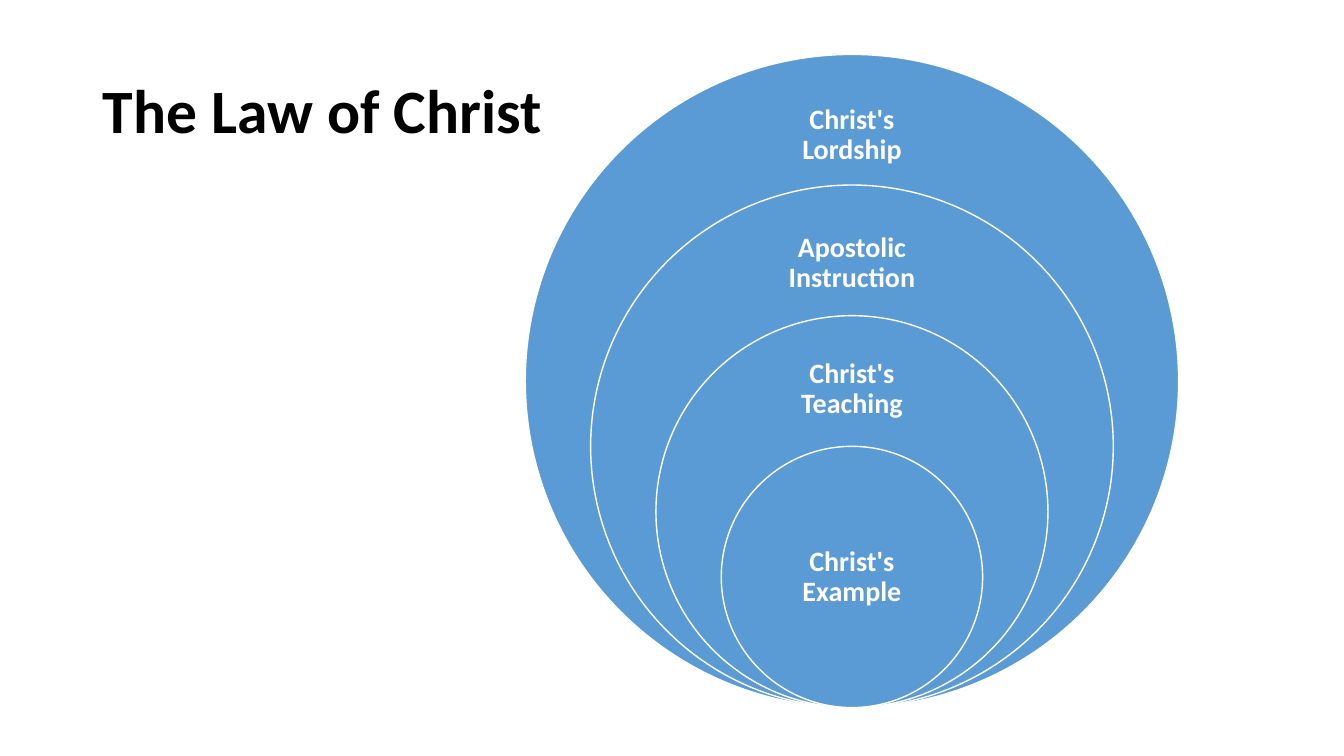
from pptx import Presentation
from pptx.dml.color import RGBColor
from pptx.enum.shapes import MSO_SHAPE
from pptx.enum.text import MSO_ANCHOR, MSO_AUTO_SIZE, PP_ALIGN
from pptx.util import Inches, Pt

OVAL = MSO_SHAPE.OVAL
MIDDLE = MSO_ANCHOR.MIDDLE
LEFT, CENTER = PP_ALIGN.LEFT, PP_ALIGN.CENTER
NO_AUTOFIT = MSO_AUTO_SIZE.NONE

TITLE = "The Law of Christ"
# Label, then top, width and height of its text box, from outer to inner circle
RINGS = [
    ("Christ's Lordship", 0.86, 1.81, 0.97),
    ("Apostolic Instruction", 2.15, 1.81, 0.93),
    ("Christ's Teaching", 3.42, 1.81, 0.88),
    ("Christ's Example", 5.08, 1.83, 1.3),
]

FONT = "Calibri"
BLUE, WHITE, BLACK = "5B9BD5", "FFFFFF", "000000"
CENTER_X = 8.45
BASE_Y = 7.02
OUTER_DIAMETER = 6.48
DIAMETER_STEP = OUTER_DIAMETER / 5
LABEL_INSET = 0.16


def color(hex_string):
    return RGBColor.from_string(hex_string)


def write(text_frame, text, size, hex_color, alignment):
    text_frame.word_wrap = True
    text_frame.auto_size = NO_AUTOFIT
    text_frame.vertical_anchor = MIDDLE
    paragraph = text_frame.paragraphs[0]
    paragraph.alignment = alignment
    paragraph.line_spacing = 0.9
    run = paragraph.add_run()
    run.text = text
    run.font.name = FONT
    run.font.size = Pt(size)
    run.font.bold = True
    run.font.color.rgb = color(hex_color)


def add_circle(slide, diameter):
    """Add a circle that rests on the shared base point."""
    circle = slide.shapes.add_shape(
        OVAL, Inches(CENTER_X - diameter / 2), Inches(BASE_Y - diameter),
        Inches(diameter), Inches(diameter))
    circle.shadow.inherit = False
    circle.fill.solid()
    circle.fill.fore_color.rgb = color(BLUE)
    circle.line.color.rgb = color(WHITE)
    circle.line.width = Pt(1)


def add_label(slide, text, top, width, height):
    box = slide.shapes.add_textbox(
        Inches(CENTER_X - width / 2), Inches(top), Inches(width), Inches(height))
    frame = box.text_frame
    frame.margin_left = frame.margin_right = Inches(LABEL_INSET)
    frame.margin_top = frame.margin_bottom = Inches(LABEL_INSET)
    write(frame, text, 20, WHITE, CENTER)


def main():
    presentation = Presentation()
    presentation.slide_width = Inches(13.33)
    presentation.slide_height = Inches(7.5)
    slide = presentation.slides.add_slide(presentation.slide_layouts[5])

    title = slide.shapes.title
    title.left, title.top = Inches(0.92), Inches(0.4)
    title.width, title.height = Inches(11.5), Inches(1.45)
    write(title.text_frame, TITLE, 44, BLACK, LEFT)

    for index, (text, top, width, height) in enumerate(RINGS):
        add_circle(slide, OUTER_DIAMETER - index * DIAMETER_STEP)
        add_label(slide, text, top, width, height)

    presentation.save("out.pptx")


if __name__ == "__main__":
    main()
